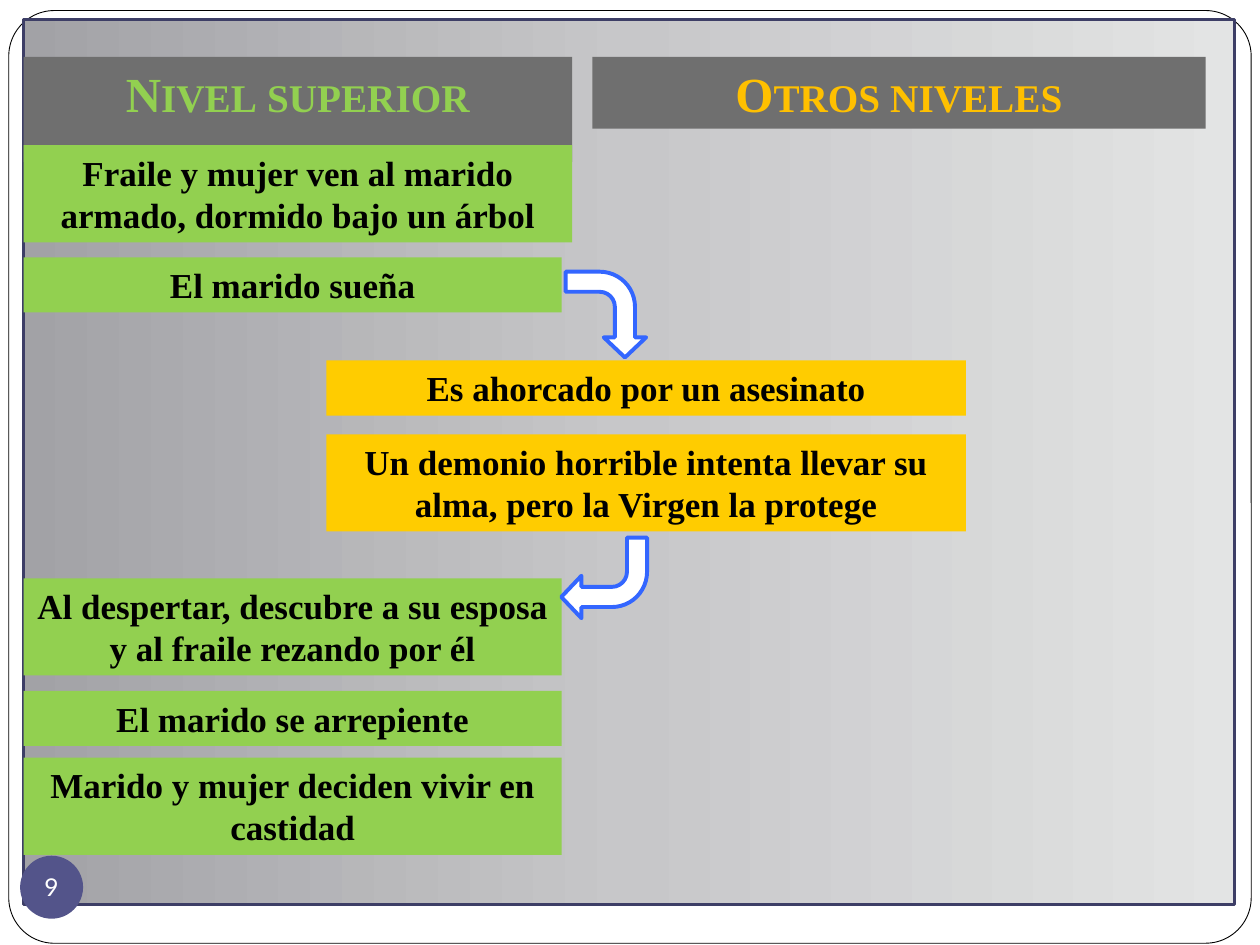
import copy

import pptx
import pptx.dml.color
import pptx.enum.shapes
import pptx.enum.text
import pptx.oxml.ns
import pptx.util

Pt = pptx.util.Pt
SHAPE = pptx.enum.shapes.MSO_SHAPE
ANCHOR = pptx.enum.text.MSO_ANCHOR
FIT = pptx.enum.text.MSO_AUTO_SIZE

GREEN, AMBER, GOLD, GREY = "92D050", "FFCC00", "FFC000", "6F6F6F"
ONE_LINE, TWO_LINES, HEADING = 31.5, 55.5, 41
LEFT, NARROW, WIDE = 13.5, 307.5, 313.5


def color(value):
    return pptx.dml.color.RGBColor.from_string(value)


def paint(shape, fill, line=None, weight=0):
    shape.fill.solid()
    shape.fill.fore_color.rgb = color(fill)
    outline(shape, line, weight)


def outline(shape, line, weight):
    if line is None:
        shape.line.fill.background()
    else:
        shape.line.color.rgb = color(line)
        shape.line.width = Pt(weight)


def add_shape(page, kind, box):
    shape = page.shapes.add_shape(kind, *map(Pt, box))
    shape.shadow.inherit = False
    return shape


def write(shape, text, size, ink, font="Times New Roman", bold=True):
    para = shape.text_frame.paragraphs[0]
    para.alignment = pptx.enum.text.PP_ALIGN.CENTER
    span = para.add_run()
    span.text = text
    span.font.name = font
    span.font.size = Pt(size)
    span.font.bold = bold
    span.font.color.rgb = color(ink)
    return span


def fit_frame(shape):
    frame = shape.text_frame
    frame.word_wrap = True
    frame.auto_size = FIT.SHAPE_TO_FIT_TEXT
    frame.vertical_anchor = ANCHOR.TOP


def add_backdrop(page, box):
    """Rounded frame with the shaded panel inside it."""
    left, top, width, height = box
    frame = add_shape(page, SHAPE.ROUNDED_RECTANGLE, box)
    frame.adjustments[0] = 0.049
    paint(frame, "FFFFFF", "000000", 0.5)

    panel = add_shape(page, SHAPE.RECTANGLE,
                      (left + 8.5, top + 5, width - 18, height - 27))
    panel.fill.gradient()
    panel.fill.gradient_angle = 0
    stops = panel.element.spPr.find(".//" + pptx.oxml.ns.qn("a:gsLst"))
    stops.insert(1, copy.deepcopy(stops[0]))
    shades = ("A2A2A6", 0), ("C7C7C9", 0.5), ("E3E4E4", 1)
    for stop, (shade, position) in zip(panel.fill.gradient_stops, shades):
        stop.color.rgb = color(shade)
        stop.position = position
    outline(panel, "3D3E66", 1.5)


def add_page_number(page, box, number):
    badge = add_shape(page, SHAPE.OVAL, box)
    paint(badge, "53548A")
    frame = badge.text_frame
    frame.margin_left = frame.margin_right = 0
    frame.margin_top = frame.margin_bottom = 0
    frame.word_wrap = False
    frame.vertical_anchor = ANCHOR.MIDDLE
    write(badge, number, 14, "FFFFFF", "Lato", False)


def format_heading(shape, text, ink):
    paint(shape, GREY)
    fit_frame(shape)
    span = write(shape, text, 28, ink)
    span.font._element.set("cap", "small")


def add_headings(page, box):
    left, top, width, height = box
    title = page.shapes.title
    title.left, title.top, title.width, title.height = map(
        Pt, (left, top, WIDE, height))
    title.element.getparent().append(title.element)  # in front of the panel
    format_heading(title, "Nivel superior", GREEN)

    gap = 11.5
    other = add_shape(page, SHAPE.RECTANGLE,
                      (left + WIDE + gap, top, width - WIDE - gap, height))
    format_heading(other, "Otros niveles", GOLD)


def add_event(page, box, text, fill):
    event = add_shape(page, SHAPE.RECTANGLE, box)
    paint(event, fill)
    fit_frame(event)
    write(event, text, 20, "000000")


def add_turn(page, box, rotation):
    arrow = add_shape(page, SHAPE.BENT_ARROW, box)
    arrow.rotation = rotation
    for index, value in enumerate((0.25, 0.264, 0.25, 0.438)):
        arrow.adjustments[index] = value
    paint(arrow, "FFFFFF", "3366FF", 2.25)


def add_story(page, left, dream_left):
    """Waking events in green at the left, dream events in amber further in."""
    waking = [
        (83, WIDE, TWO_LINES,
         "Fraile y mujer ven al marido armado, dormido bajo un árbol"),
        (147, NARROW, ONE_LINE, "El marido sueña"),
        (330.5, NARROW, TWO_LINES,
         "Al despertar, descubre a su esposa y al fraile rezando por él"),
        (394.75, NARROW, ONE_LINE, "El marido se arrepiente"),
        (433, NARROW, TWO_LINES, "Marido y mujer deciden vivir en castidad"),
    ]
    dream = [
        (206, 365.5, ONE_LINE, "Es ahorcado por un asesinato"),
        (248.25, 365.5, TWO_LINES,
         "Un demonio horrible intenta llevar su alma, pero la Virgen la protege"),
    ]
    for x, fill, events in (left, GREEN, waking), (dream_left, AMBER, dream):
        for top, width, height, text in events:
            add_event(page, (x, top, width, height), text, fill)
    add_turn(page, (321.75, 156.75, 49, 46), 90)
    add_turn(page, (320.75, 307.25, 49, 46), 180)


def main():
    deck = pptx.Presentation()
    deck.slide_width, deck.slide_height = Pt(720), Pt(540)
    page = deck.slides.add_slide(deck.slide_layouts.get_by_name("Title Only"))
    add_backdrop(page, (5, 6, 710, 533))
    add_page_number(page, (11.5, 489, 36, 36), "9")
    add_headings(page, (LEFT, 32.5, 675.5, HEADING))
    add_story(page, LEFT, 186.5)
    deck.save("out.pptx")


if __name__ == "__main__":
    main()
